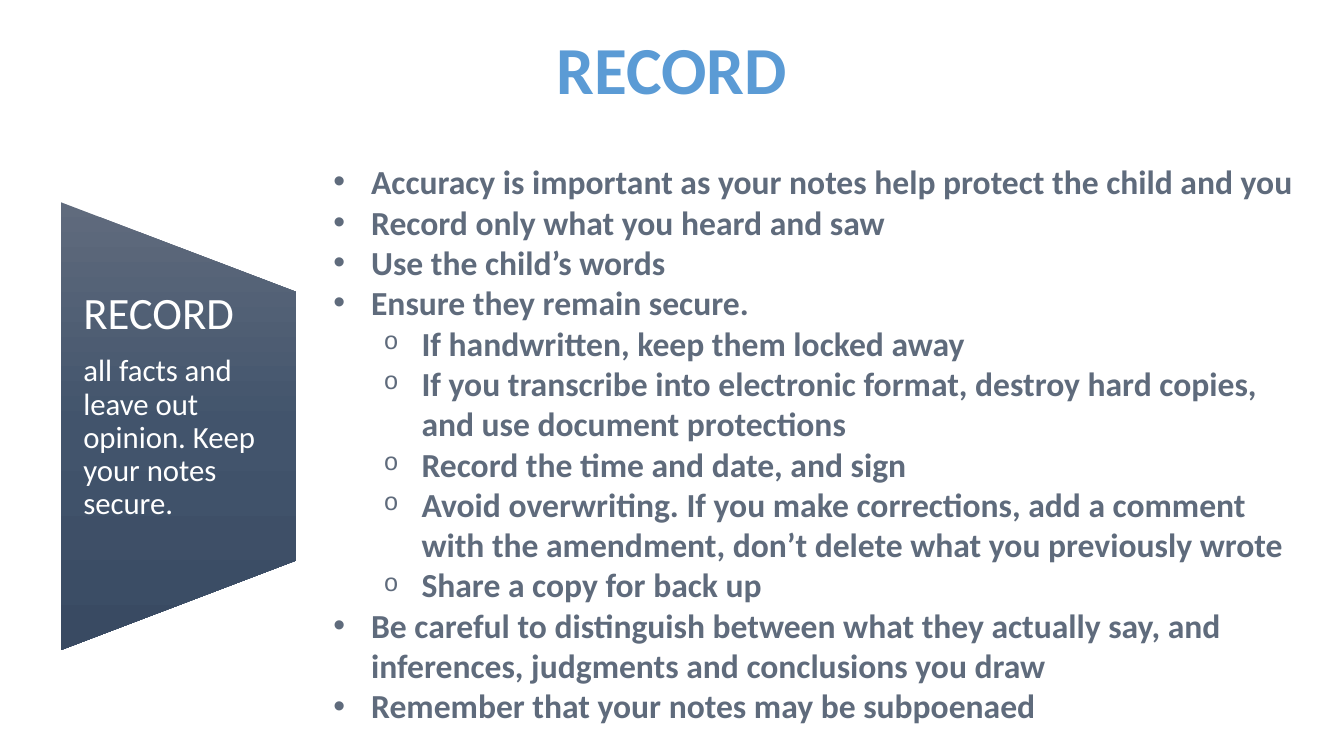
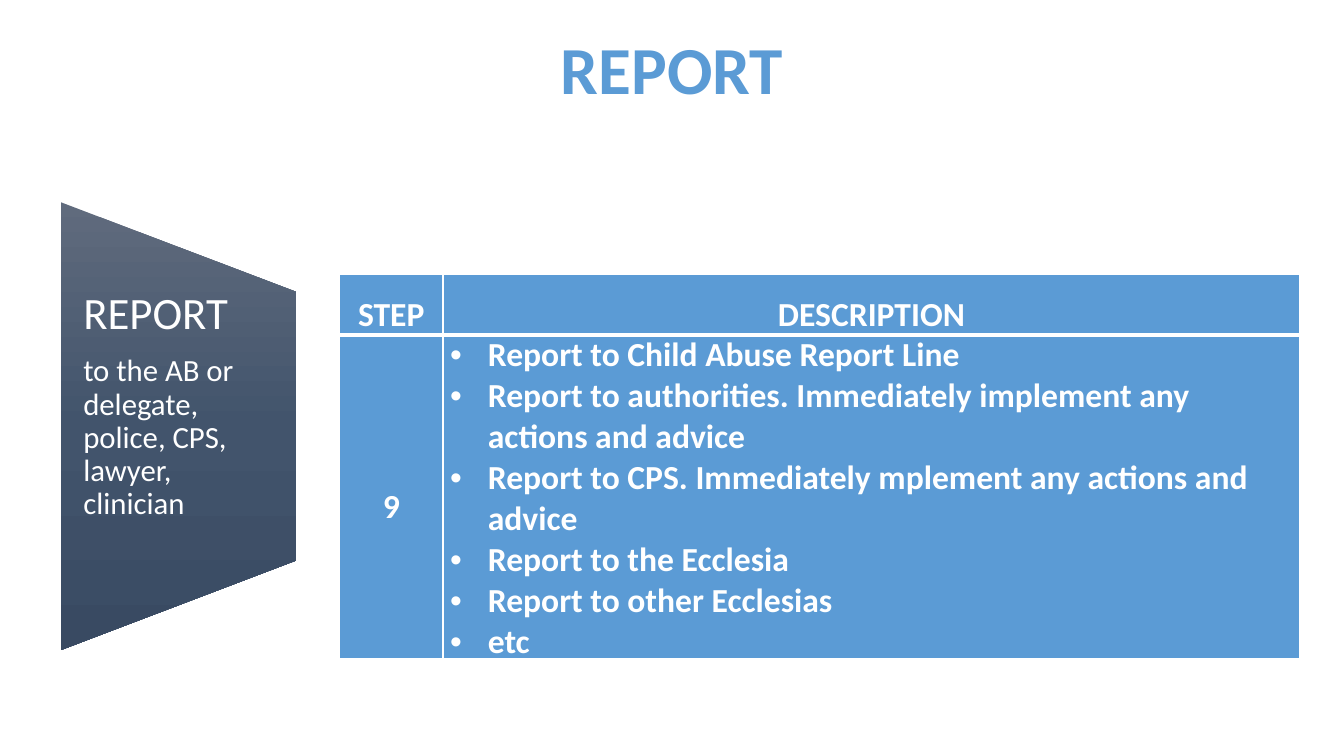
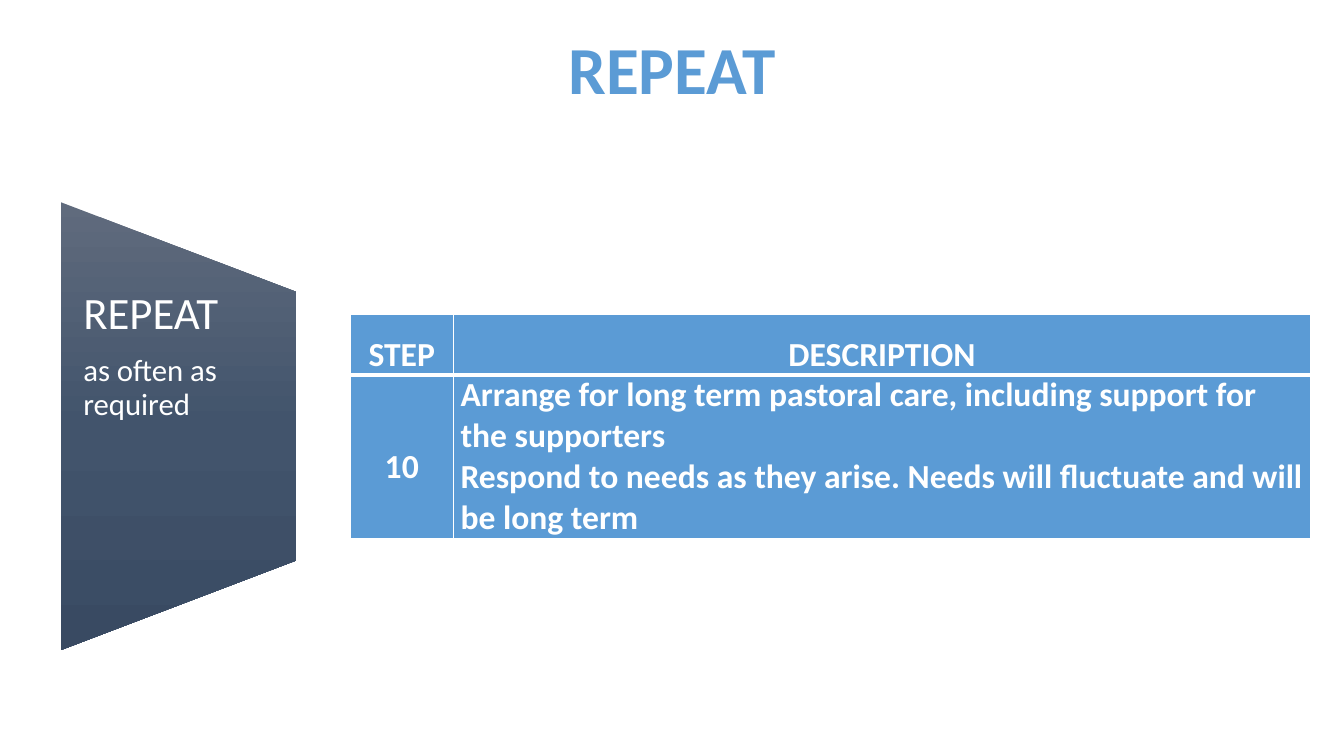
"""Build three slides: Record, Report and Repeat."""
from dataclasses import dataclass
from pptx import Presentation
from pptx.dml.color import RGBColor
from pptx.enum.shapes import MSO_SHAPE
from pptx.enum.text import MSO_ANCHOR, PP_ALIGN
from pptx.oxml import parse_xml
from pptx.oxml.ns import nsdecls
from pptx.util import Pt


@dataclass(frozen=True)
class Theme:
    font: str = "Calibri"
    blue: str = "5B9BD5"
    slate: str = "5F6B7C"
    white: str = "FFFFFF"
    fade: tuple = ((0, "606B7D"), (50, "42546C"), (100, "394A62"))
    title: int = 48
    head: int = 32
    body: int = 24
    note: int = 22


look = Theme()


def write(frame, text, size, hue, bold=False):
    para = frame.paragraphs[0]
    if para.runs:
        para = frame.add_paragraph()
    run = para.add_run()
    run.text = text
    run.font.name = look.font
    run.font.size = Pt(size)
    run.font.bold = bold
    run.font.color.rgb = RGBColor.from_string(hue)
    return para


def bullet(para, level=0):
    mark, face, scale = (("•", "Arial", 100), ("o", "Courier New", 75))[level]
    para.level = level
    props = para._p.get_or_add_pPr()
    props.set("marL", str(Pt(27 + 36 * level)))
    props.set("indent", str(Pt(-27)))
    for tag in (f'buSzPct {nsdecls("a")} val="{scale * 1000}"',
                f'buFont {nsdecls("a")} typeface="{face}"',
                f'buChar {nsdecls("a")} char="{mark}"'):
        props.append(parse_xml(f"<a:{tag}/>"))


notes = [
    (0, "Accuracy is important as your notes help protect the child and you"),
    (0, "Record only what you heard and saw"),
    (0, "Use the child’s words"),
    (0, "Ensure they remain secure."),
    (1, "If handwritten, keep them locked away"),
    (1, "If you transcribe into electronic format, destroy hard copies, and use document protections"),
    (1, "Record the time and date, and sign"),
    (1, "Avoid overwriting. If you make corrections, add a comment with the amendment, don’t delete what you previously wrote"),
    (1, "Share a copy for back up"),
    (0, "Be careful to distinguish between what they actually say, and inferences, judgments and conclusions you draw"),
    (0, "Remember that your notes may be subpoenaed"),
]
report = [
    "Report to Child Abuse Report Line",
    "Report to authorities. Immediately implement any actions and advice",
    "Report to CPS. Immediately mplement any actions and advice",
    "Report to the Ecclesia",
    "Report to other Ecclesias",
    "etc",
]
repeat = [
    "Arrange for long term pastoral care, including support for the supporters",
    "Respond to needs as they arise. Needs will fluctuate and will be long term",
]
pages = [
    ("RECORD", "all facts and leave out opinion. Keep your notes secure.", None),
    ("REPORT", "to the AB or delegate, police, CPS, lawyer, clinician",
     ("9", report, True, 242.5, 196, 231)),
    ("REPEAT", "as often as required", ("10", repeat, False, 250, 224.5, 117)),
]

deck = Presentation()
deck.slide_width, deck.slide_height = Pt(960), Pt(540)

for name, hint, plan in pages:
    slide = deck.slides.add_slide(deck.slide_layouts[6])
    shapes = slide.shapes

    frame = shapes.add_textbox(Pt(360), Pt(12), Pt(240), Pt(67)).text_frame
    frame.word_wrap = True
    para = write(frame, name, look.title, look.blue, True)
    para.alignment = PP_ALIGN.CENTER
    para.line_spacing = 1.07
    para.space_after = Pt(8)

    panel = shapes.add_shape(MSO_SHAPE.FLOWCHART_MANUAL_OPERATION,
                             Pt(-32.4), Pt(220.4), Pt(319.8), Pt(168))
    panel.rotation = 270
    panel.shadow.inherit = False
    panel.line.fill.background()
    stops = "".join(f'<a:gs pos="{spot * 1000}"><a:srgbClr val="{hue}"/></a:gs>'
                    for spot, hue in look.fade)
    panel._element.spPr.insert(2, parse_xml(
        f'<a:gradFill {nsdecls("a")} rotWithShape="0"><a:gsLst>{stops}</a:gsLst>'
        '<a:lin ang="5400000" scaled="0"/></a:gradFill>'))

    frame = shapes.add_textbox(Pt(43.5), Pt(208), Pt(168), Pt(192)).text_frame
    frame.word_wrap = True
    frame.margin_left = frame.margin_right = Pt(16)
    frame.margin_top = frame.margin_bottom = 0
    for text, size in ((name, look.head), (hint, look.note)):
        para = write(frame, text, size, look.white)
        para.line_spacing = 0.9
        para.space_after = Pt(size * 0.35)

    if plan is None:
        frame = shapes.add_textbox(Pt(231), Pt(111.6), Pt(702), Pt(415)).text_frame
        frame.word_wrap = True
        for level, text in notes:
            bullet(write(frame, text, look.body, look.slate, True), level)
        continue

    step, lines, dots, left, top, tall = plan
    table = shapes.add_table(2, 2, Pt(left), Pt(top), Pt(686), Pt(42 + tall)).table
    table.horz_banding = False
    for col, wide in zip(table.columns, (74, 612)):
        col.width = Pt(wide)
    for row, high in zip(table.rows, (42, tall)):
        row.height = Pt(high)
    grid = ((["STEP"], ["DESCRIPTION"]), ([step], lines))
    for r, texts in enumerate(grid):
        for c, items in enumerate(texts):
            cell = table.cell(r, c)
            cell.margin_left = cell.margin_right = Pt(5)
            cell.margin_top = cell.margin_bottom = 0
            cell.vertical_anchor = MSO_ANCHOR.MIDDLE if r else MSO_ANCHOR.TOP
            props = cell._tc.get_or_add_tcPr()
            for side, thick in zip("LRTB", (1, 1, 3 if r else 1, 1 if r else 3)):
                props.append(parse_xml(
                    f'<a:ln{side} {nsdecls("a")} w="{Pt(thick)}"><a:solidFill>'
                    f'<a:srgbClr val="{look.white}"/></a:solidFill></a:ln{side}>'))
            cell.fill.solid()
            cell.fill.fore_color.rgb = RGBColor.from_string(look.blue)
            for text in items:
                para = write(cell.text_frame, text, look.body, look.white, True)
                if items is not lines:
                    para.alignment = PP_ALIGN.CENTER
                    para.line_spacing = 1.5
                elif dots:
                    bullet(para)

deck.save("out.pptx")
